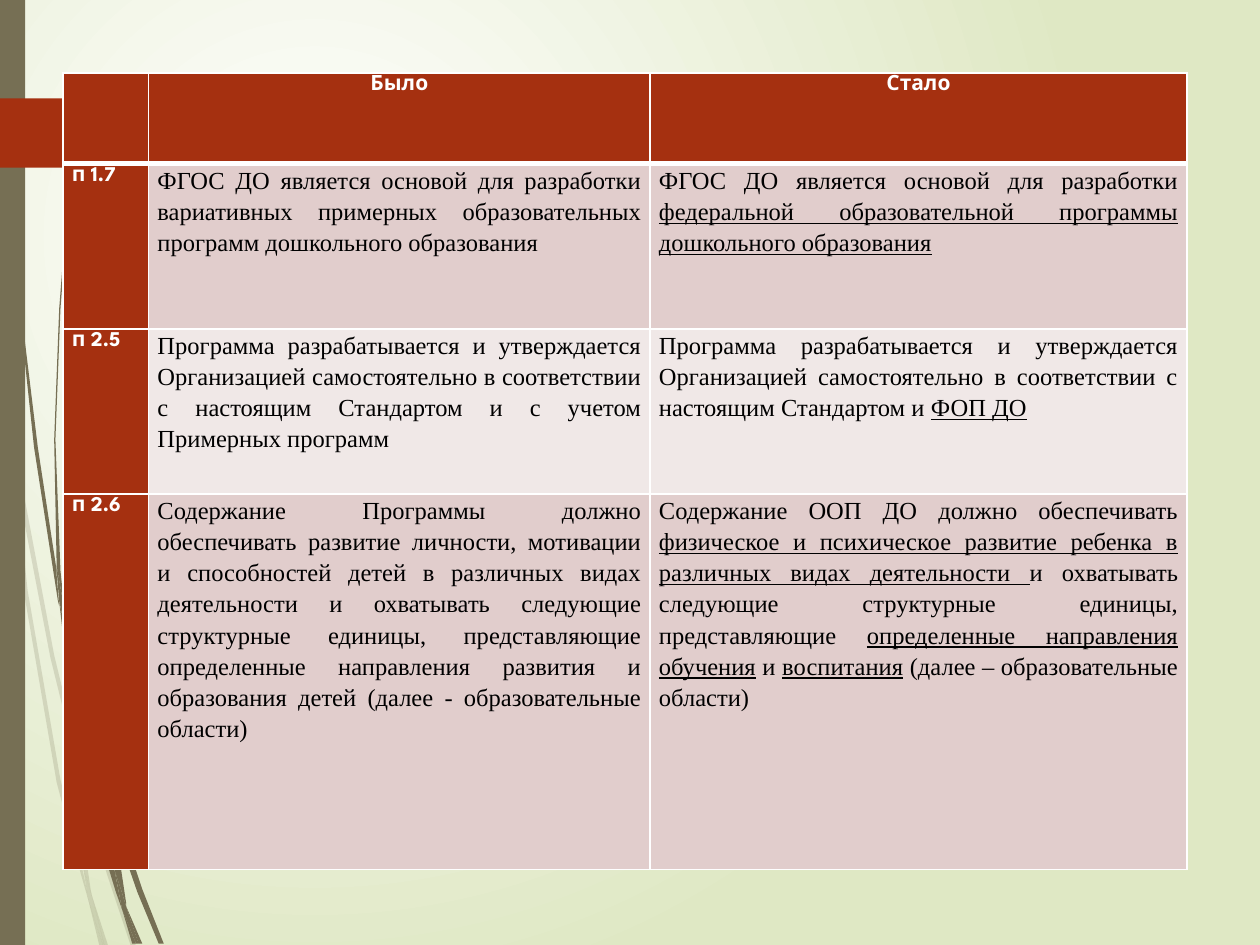
import pptx
import pptx.util
import pptx.dml.color
import pptx.enum.shapes
import pptx.enum.text
import pptx.oxml
import pptx.oxml.ns
import lxml.etree

RGB = pptx.dml.color.RGBColor
ALIGN = pptx.enum.text.PP_ALIGN
qn = pptx.oxml.ns.qn

WHITE = RGB(0xFF, 0xFF, 0xFF)
BLACK = RGB(0, 0, 0)
PALE_GREEN = RGB(0xDF, 0xE8, 0xC4)
OLIVE = RGB(0x76, 0x6F, 0x54)
RUST = RGB(0xA5, 0x30, 0x10)
BAND_DARK = RGB(0xE1, 0xCD, 0xCC)
BAND_LIGHT = RGB(0xF0, 0xE8, 0xE7)

HEAD_FONT, BODY_FONT = "League Spartan", "Times New Roman"
COLUMNS, ROWS = 1000, 750  # the slide grid; one step is 0.01 inch
STEP = pptx.util.Inches(0.01)

# Outlines of the grass blades, as (column, row) points of the grid
FAINT_BLADES = [
    [(8, 350), (6, 322), (0, 282), (0, 299), (7, 344)],
    [(40, 522), (59, 599), (59, 586), (43, 520), (10, 345), (12, 376)],
    [(64, 607), (61, 596), (61, 610), (85, 694), (104, 751), (108, 751), (88, 692)],
    [(83, 751), (86, 751), (73, 711)],
    [(64, 683), (48, 619), (22, 469), (12, 376), (8, 350), (19, 470), (45, 621),
     (64, 693), (70, 714), (69, 707)],
    [(58, 599), (60, 646), (64, 683), (67, 692), (73, 711), (72, 706), (63, 646),
     (61, 610), (61, 608)],
    [(61, 584), (76, 462), (111, 349), (159, 245), (187, 198), (201, 175), (217, 154),
     (217, 153), (201, 175), (186, 197), (158, 244), (110, 348), (75, 461), (59, 584),
     (59, 586), (61, 596)],
    [(70, 714), (79, 751), (82, 751)],
    [(61, 608), (61, 610), (61, 596), (59, 586), (58, 599)],
    [(67, 692), (65, 683), (69, 707), (70, 714), (82, 751), (83, 751), (73, 711)],
]
SOLID_BLADES = [
    [(5, 110), (14, 233), (27, 355), (46, 477), (47, 481), (45, 457), (45, 453),
     (30, 355), (15, 232), (6, 109), (4, 48), (3, 0), (2, 0), (3, 48)],
    [(73, 592), (88, 645), (88, 633), (88, 631), (77, 590), (50, 472), (53, 505)],
    [(94, 649), (91, 641), (91, 656), (109, 708), (126, 749), (130, 749), (113, 706)],
    [(91, 691), (81, 657), (60, 556), (53, 505), (47, 477), (56, 557), (77, 659),
     (92, 708), (97, 722), (96, 717)],
    [(50, 472), (48, 453), (44, 349), (48, 245), (52, 193), (58, 141), (51, 193),
     (47, 245), (43, 349), (45, 449), (49, 472)],
    [(110, 749), (113, 749), (100, 719)],
    [(47, 477), (53, 505), (50, 472), (49, 472), (45, 449), (45, 453)],
    [(91, 633), (103, 552), (131, 476), (169, 406), (191, 374), (203, 359), (216, 344),
     (215, 344), (203, 358), (191, 373), (168, 405), (129, 474), (101, 551), (88, 631),
     (91, 641)],
    [(97, 722), (105, 749), (108, 749)],
    [(88, 645), (91, 691), (96, 706), (100, 719), (100, 716), (91, 656), (90, 651)],
    [(88, 645), (90, 651), (91, 656), (91, 641), (88, 631), (88, 633)],
    [(96, 706), (91, 691), (96, 717), (97, 722), (108, 749), (110, 749), (100, 719)],
]
PAGE_TAG = [(149, 107), (124, 132), (121, 133), (0, 133), (0, 78), (121, 78),
            (124, 79), (149, 104)]

# Underscores enclose the underlined words
COMPARISON = [
    ["", "Было", "Стало"],
    ["п 1.7",
     "ФГОС ДО является основой для разработки вариативных примерных образовательных "
     "программ дошкольного образования",
     "ФГОС ДО является основой для разработки _федеральной образовательной программы "
     "дошкольного образования_"],
    ["п 2.5",
     "Программа разрабатывается и утверждается Организацией самостоятельно в "
     "соответствии с настоящим Стандартом и с учетом Примерных программ",
     "Программа разрабатывается и утверждается Организацией самостоятельно в "
     "соответствии с настоящим Стандартом и _ФОП ДО_"],
    ["п 2.6",
     "Содержание Программы должно обеспечивать развитие личности, мотивации и "
     "способностей детей в различных видах деятельности и охватывать следующие "
     "структурные единицы, представляющие определенные направления развития и "
     "образования детей (далее - образовательные области)",
     "Содержание ООП ДО должно обеспечивать _физическое и психическое развитие ребенка "
     "в различных видах деятельности _и охватывать следующие структурные единицы, "
     "представляющие _определенные направления обучения_ и _воспитания_ (далее – "
     "образовательные области)"],
]


class SlideBuilder:
    def __init__(self, presentation):
        self.slide = presentation.slides.add_slide(presentation.slide_layouts[6])

    def background(self, inner, outer):
        """Radial gradient spreading from the upper left."""
        fill = self.slide.background.fill
        fill.gradient()
        for stop, color, position in zip(fill.gradient_stops, (inner, outer), (0, 1)):
            stop.color.rgb = color
            stop.position = position
        linear = next(self.slide.element.iter(qn("a:lin")))
        radial = lxml.etree.Element(qn("a:path"), path="circle")
        lxml.etree.SubElement(radial, qn("a:fillToRect"),
                              l="50000", t="50000", r="100000", b="100000")
        linear.getparent().replace(linear, radial)

    def paint(self, shape, color, opacity=100):
        shape.shadow.inherit = False
        shape.fill.solid()
        shape.fill.fore_color.rgb = color
        shape.line.fill.background()
        if opacity < 100:
            tint = next(shape.element.spPr.iter(qn("a:srgbClr")))
            lxml.etree.SubElement(tint, qn("a:alpha"), val=str(opacity * 1000))

    def rectangle(self, column, row, width, height, color):
        kind = pptx.enum.shapes.MSO_SHAPE.RECTANGLE
        bounds = (STEP * n for n in (column, row, width, height))
        self.paint(self.slide.shapes.add_shape(kind, *bounds), color)

    def outline(self, points, color, opacity=100, shapes=None):
        shapes = shapes or self.slide.shapes
        builder = shapes.build_freeform(*points[0], scale=STEP)
        builder.add_line_segments(points[1:], close=True)
        self.paint(builder.convert_to_shape(), color, opacity)

    def blades(self, outlines, opacity):
        group = self.slide.shapes.add_group_shape()
        for points in outlines:
            self.outline(points, OLIVE, opacity, group.shapes)

    def borders(self, cell, bottom):
        properties = cell._tc.get_or_add_tcPr()
        for index, (side, points) in enumerate(zip("LRTB", (1, 1, 1, bottom))):
            line = lxml.etree.Element(qn(f"a:ln{side}"), w=str(pptx.util.Pt(points)))
            solid = lxml.etree.SubElement(line, qn("a:solidFill"))
            lxml.etree.SubElement(solid, qn("a:srgbClr"), val=str(WHITE))
            properties.insert(index, line)

    def cell_text(self, cell, text, heading, align):
        cell.margin_left = cell.margin_right = STEP * 7
        cell.margin_top = cell.margin_bottom = 0
        paragraph = cell.text_frame.paragraphs[0]
        paragraph.alignment = align
        paragraph.line_spacing = 1.15
        for index, part in enumerate(text.split("_")):
            if not part:
                continue
            run = paragraph.add_run()
            run.text = part
            run.font.name = HEAD_FONT if heading else BODY_FONT
            run.font.size = pptx.util.Pt(12 if heading else 14)
            run.font.bold = heading
            run.font.underline = index % 2 == 1
            run.font.color.rgb = WHITE if heading else BLACK

    def table(self, column, row, widths, heights, texts):
        frame = self.slide.shapes.add_table(
            len(heights), len(widths), STEP * column, STEP * row,
            STEP * sum(widths), STEP * sum(heights))
        table = frame.table
        for table_column, width in zip(table.columns, widths):
            table_column.width = STEP * width
        for r, (height, row_texts) in enumerate(zip(heights, texts)):
            table.rows[r].height = STEP * height
            for c, text in enumerate(row_texts):
                cell = table.cell(r, c)
                heading = r == 0 or c == 0
                band = BAND_DARK if r % 2 else BAND_LIGHT
                cell.fill.solid()
                cell.fill.fore_color.rgb = RUST if heading else band
                self.borders(cell, bottom=3 if r == 0 else 1)
                self.cell_text(cell, text, heading, ALIGN.JUSTIFY if r else ALIGN.CENTER)


def main():
    presentation = pptx.Presentation()
    presentation.slide_width = STEP * COLUMNS
    presentation.slide_height = STEP * ROWS
    builder = SlideBuilder(presentation)
    builder.background(WHITE, PALE_GREEN)
    builder.blades(FAINT_BLADES, opacity=20)
    builder.blades(SOLID_BLADES, opacity=100)
    builder.rectangle(0, 0, 20, ROWS, OLIVE)
    builder.outline(PAGE_TAG, RUST)
    builder.table(50, 58, (68, 398, 426), (72, 131, 131, 298), COMPARISON)
    presentation.save("out.pptx")


if __name__ == "__main__":
    main()
